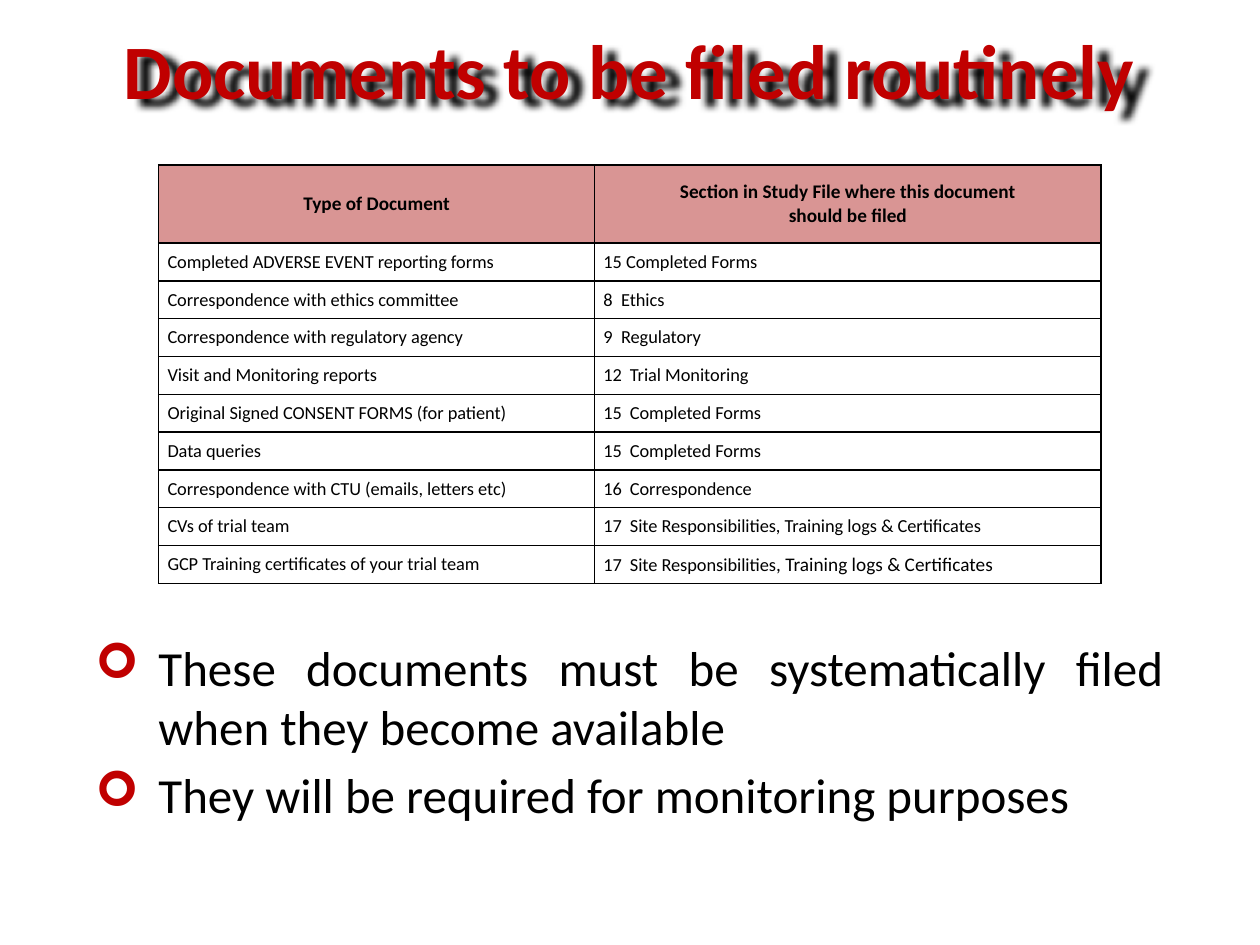
from dataclasses import dataclass

from lxml.etree import SubElement
from pptx import Presentation
from pptx.dml.color import RGBColor
from pptx.enum.text import MSO_ANCHOR, PP_ALIGN
from pptx.oxml.ns import qn
from pptx.util import Inches, Pt

COLORS = {"red": "C00000", "black": "000000", "header": "D99594"}
FONT = "Calibri"


@dataclass
class Entry:
    document: str
    number: str
    section: str
    large_tail: str = ""
    tab_gap: bool = True


HEADERS = [
    ["Type of Document"],
    ["Section in Study File where this document", "should be filed"],
]
ENTRIES = [
    Entry("Completed ADVERSE EVENT reporting forms", "15", "Completed Forms", tab_gap=False),
    Entry("Correspondence with ethics committee", "8", "Ethics"),
    Entry("Correspondence with regulatory agency", "9", "Regulatory"),
    Entry("Visit and Monitoring reports", "12", "Trial Monitoring"),
    Entry("Original Signed CONSENT FORMS (for patient)", "15", "Completed Forms"),
    Entry("Data queries", "15", "Completed Forms"),
    Entry("Correspondence with CTU (emails, letters etc)", "16", "Correspondence"),
    Entry("CVs of trial team", "17", "Site Responsibilities, Training logs & Certificates"),
    Entry("GCP Training certificates of your trial team", "17", "Site Responsibilities",
          ", Training logs & Certificates"),
]
BULLETS = [
    "These documents must be systematically filed when they become available",
    "They will be required for monitoring purposes",
]


def add_span(para, text: str, *, size: float, color: str = "black", bold: bool = False):
    span = para.add_run()
    span.text = text
    span.font.name = FONT
    span.font.size = Pt(size)
    span.font.bold = bold
    span.font.color.rgb = RGBColor.from_string(COLORS[color])
    return span


def add_box(page, left: float, top: float, width: float, height: float):
    box = page.shapes.add_textbox(Inches(left), Inches(top), Inches(width), Inches(height))
    box.text_frame.word_wrap = True
    return box


def next_para(frame, index: int):
    return frame.add_paragraph() if index else frame.paragraphs[0]


def add_shadow(box) -> None:
    effects = SubElement(box._element.spPr, qn("a:effectLst"))
    shadow = SubElement(effects, qn("a:outerShdw"), blurRad=str(Inches(0.06)),
                        dist=str(Inches(0.11)), dir=str(25 * 60000),
                        algn="tl", rotWithShape="0")
    SubElement(shadow, qn("a:srgbClr"), val=COLORS["black"])


def add_title(page) -> None:
    box = add_box(page, 0, 0.13, 10, 0.84)
    para = box.text_frame.paragraphs[0]
    para.alignment = PP_ALIGN.CENTER
    add_span(para, "Documents to be filed routinely", size=44, color="red", bold=True)
    add_shadow(box)


def set_borders(cell) -> None:
    properties = cell._tc.get_or_add_tcPr()
    for position, side in enumerate(("lnL", "lnR", "lnT", "lnB")):
        line = SubElement(properties, qn(f"a:{side}"), w=str(Pt(1)))
        fill = SubElement(line, qn("a:solidFill"))
        SubElement(fill, qn("a:srgbClr"), val=COLORS["black"])
        properties.remove(line)
        properties.insert(position, line)


def style_cell(cell, fill: str = "") -> None:
    cell.vertical_anchor = MSO_ANCHOR.MIDDLE
    cell.margin_left = cell.margin_right = Inches(0.07)
    cell.margin_top = cell.margin_bottom = 0
    if fill:
        cell.fill.solid()
        cell.fill.fore_color.rgb = RGBColor.from_string(COLORS[fill])
    else:
        cell.fill.background()
    set_borders(cell)


def add_tab_stop(para, position: float) -> None:
    stops = SubElement(para._p.get_or_add_pPr(), qn("a:tabLst"))
    SubElement(stops, qn("a:tab"), pos=str(Inches(position)), algn="l")


def fill_entry(document_cell, section_cell, entry: Entry) -> None:
    add_span(document_cell.text_frame.paragraphs[0], entry.document, size=10.5)
    para = section_cell.text_frame.paragraphs[0]
    if entry.tab_gap:
        add_tab_stop(para, 0.07 + 0.07 * len(entry.number))
    gap = "\t" if entry.tab_gap else " "
    add_span(para, entry.number + gap + entry.section, size=10.5)
    if entry.large_tail:
        add_span(para, entry.large_tail, size=11)


def add_filing_table(page) -> None:
    table = page.shapes.add_table(len(ENTRIES) + 1, 2, Inches(1.26), Inches(1.31),
                                  Inches(7.48), Inches(3.32)).table
    for column, width in zip(table.columns, (3.46, 4.02)):
        column.width = Inches(width)
    for index, row in enumerate(table.rows):
        row.height = Inches(0.3 if index else 0.62)
        for cell in row.cells:
            style_cell(cell, "" if index else "header")
    for column, lines in enumerate(HEADERS):
        frame = table.cell(0, column).text_frame
        for index, line in enumerate(lines):
            para = next_para(frame, index)
            para.alignment = PP_ALIGN.CENTER
            add_span(para, line, size=11, bold=True)
    for index, entry in enumerate(ENTRIES, start=1):
        fill_entry(table.cell(index, 0), table.cell(index, 1), entry)


def set_bullet(para) -> None:
    properties = para._p.get_or_add_pPr()
    properties.set("marL", str(Inches(0.5)))
    properties.set("indent", str(Inches(-0.5)))
    color = SubElement(properties, qn("a:buClr"))
    SubElement(color, qn("a:srgbClr"), val=COLORS["red"])
    SubElement(properties, qn("a:buFont"), typeface="Wingdings")
    SubElement(properties, qn("a:buChar"), char="➢")


def add_bullets(page) -> None:
    frame = add_box(page, 0.66, 5.01, 8.67, 1.61).text_frame
    for index, text in enumerate(BULLETS):
        para = next_para(frame, index)
        para.alignment = PP_ALIGN.JUSTIFY
        para.space_before = Pt(5.6 if index else 0)
        set_bullet(para)
        add_span(para, text, size=28)


def main() -> None:
    deck = Presentation()
    deck.slide_width, deck.slide_height = Inches(10), Inches(7.5)
    page = deck.slides.add_slide(deck.slide_layouts[6])
    add_title(page)
    add_filing_table(page)
    add_bullets(page)
    deck.save("out.pptx")


if __name__ == "__main__":
    main()
